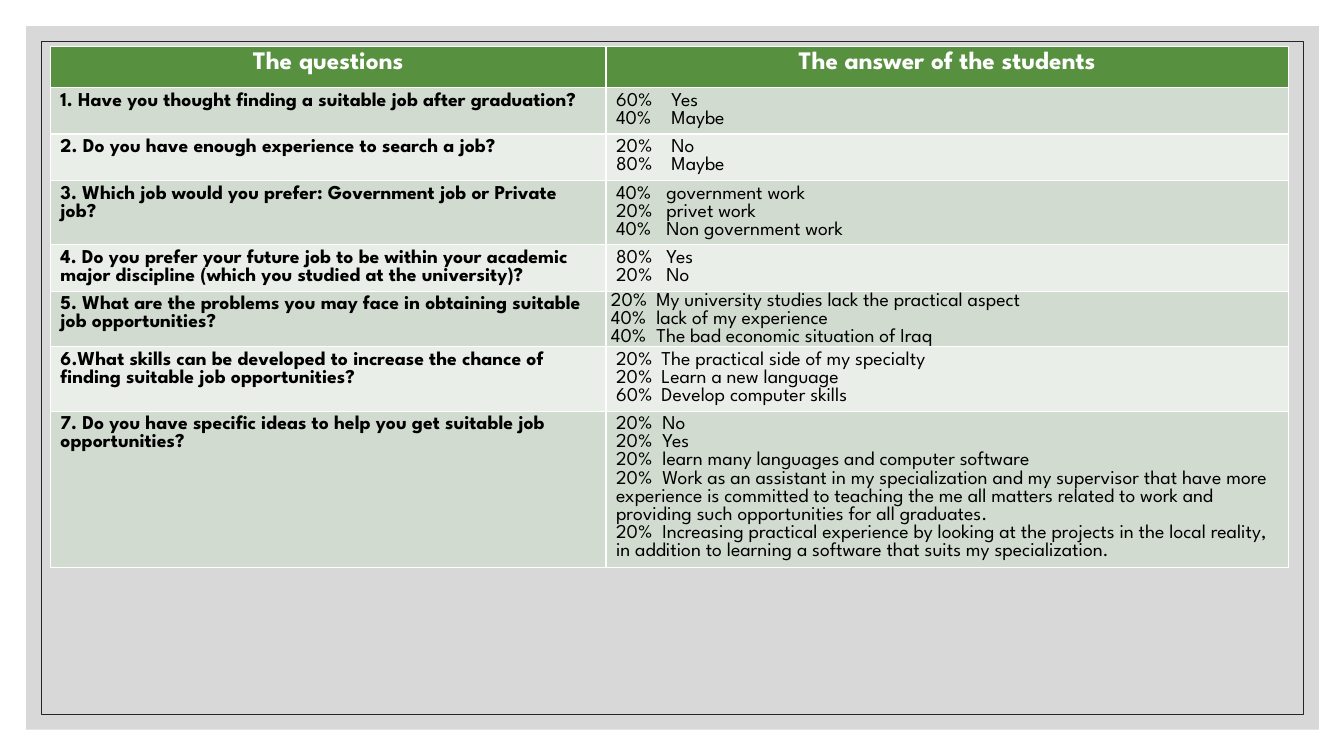
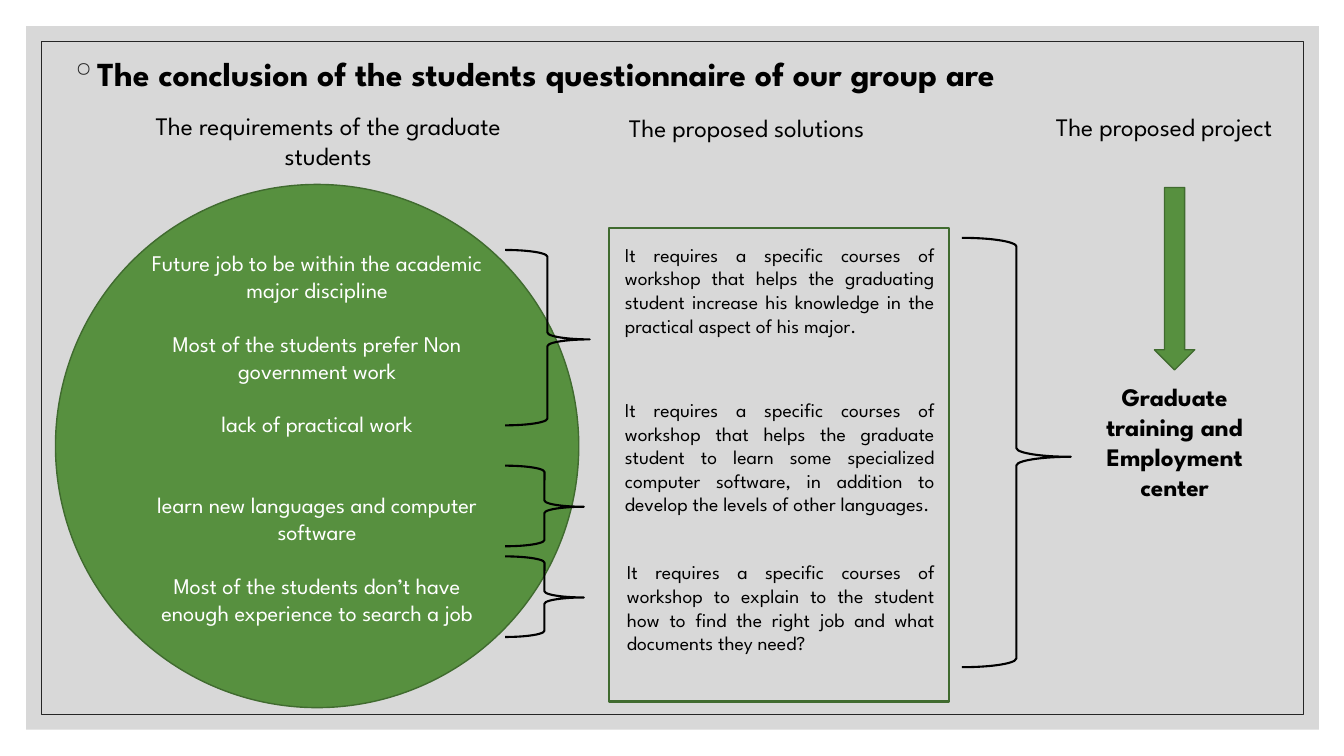
from dataclasses import dataclass

from pptx import Presentation
from pptx.dml.color import RGBColor
from pptx.enum.shapes import MSO_SHAPE
from pptx.enum.text import MSO_ANCHOR, PP_ALIGN
from pptx.oxml import parse_xml
from pptx.oxml.ns import nsdecls
from pptx.util import Emu, Pt

EMU_PER_PX = 9144


@dataclass(frozen=True)
class Theme:
    """Colours, type sizes and line heights shared by the slides."""
    font: str = "League Spartan"
    green: str = "57903F"
    dark_green: str = "406B2F"
    panel: str = "BFBFBF"
    frame: str = "262626"
    ink: str = "000000"
    paper: str = "FFFFFF"
    bands: tuple = ("D1DBCF", "EAEEE8")
    title: int = 24
    heading: int = 18
    need: int = 16
    body: int = 14
    leading: float = 1.2
    tight: float = 0.92


THEME = Theme()

HEADERS = ("The questions", "The answer of the students")
SURVEY = [
    (46, 55, "1. Have you thought finding a suitable job after graduation?",
     [("60%", "Yes"), ("40%", "Maybe")]),
    (46, 55, "2. Do you have enough experience to search a job?",
     [("20%", "No"), ("80%", "Maybe")]),
    (64, 50, "3. Which job would you prefer: Government job or Private job?",
     [("40%", "government work"), ("20%", "privet work"), ("40%", "Non government work")]),
    (46, 50, "4. Do you prefer your future job to be within your academic major discipline "
     "(which you studied at the university)?",
     [("80%", "Yes"), ("20%", "No")]),
    (55, 45, "5. What are the problems you may face in obtaining suitable job opportunities?",
     [("20%", "My university studies lack the practical aspect"),
      ("40%", "lack of my experience"),
      ("40%", "The bad economic situation of Iraq")]),
    (64, 45, "6.What skills can be developed to increase the chance of finding suitable "
     "job opportunities?",
     [("20%", "The practical side of my specialty"),
      ("20%", "Learn a new language"),
      ("60%", "Develop computer skills")]),
    (155, 46, "7. Do you have specific ideas to help you get suitable job opportunities?",
     [("20%", "No"), ("20%", "Yes"),
      ("20%", "learn many languages and computer software"),
      ("20%", "Work as an assistant in my specialization and my supervisor that have more "
       "experience is committed to teaching the me all matters related to work and "
       "providing such opportunities for all graduates."),
      ("20%", "Increasing practical experience by looking at the projects in the local "
       "reality, in addition to learning a software that suits my specialization.")]),
]
PROBLEMS_ROW = 5

NEEDS = [
    (0, "Future job to be within the academic major discipline"),
    (1, "Most of the students prefer Non government work"),
    (1, "lack of practical work"),
    (2, "learn new languages and computer software"),
    (1, "Most of the students don’t have enough experience to search a job"),
]
SOLUTIONS = [
    ((610, 236, 327, 128),
     "It requires a specific courses of workshop that helps the graduating student "
     "increase his knowledge in the practical aspect of his major."),
    ((610, 390, 327, 151),
     "It requires a specific courses of workshop that helps the graduate student to learn "
     "some specialized computer software, in addition to develop the levels of other languages."),
    ((612, 551, 325, 128),
     "It requires a specific courses of workshop to explain to the student how to find "
     "the right job and what documents they need?"),
]
HEADINGS = [
    ((136, 104, 379, 71), "The requirements of the graduate students", PP_ALIGN.CENTER),
    ((614, 107, 304, 40), "The proposed solutions", PP_ALIGN.LEFT),
    ((1027, 105, 255, 71), "The proposed project", PP_ALIGN.CENTER),
]
BRACES = [(501, 248, 84, 174), (501, 462, 78, 80), (501, 552, 78, 80), (954, 236, 108, 426)]


def px(length):
    """Turn px into EMU."""
    return Emu(length * EMU_PER_PX)


def rgb(colour):
    """Turn a hex string into a colour."""
    return RGBColor.from_string(colour)


def style(paragraph, size, colour=THEME.ink, bold=False, align=PP_ALIGN.LEFT,
          leading=THEME.leading):
    """Set the font, alignment and line height of a paragraph."""
    paragraph.alignment = align
    paragraph.line_spacing = Pt(round(size * leading, 1))
    font = paragraph.font
    font.name, font.size, font.bold = THEME.font, Pt(size), bold
    font.color.rgb = rgb(colour)


def write_lines(frame, lines):
    """Put one paragraph per line into a text frame and return them."""
    frame.text = "\n".join(lines)
    return frame.paragraphs


def add_figure(slide, preset, box, fill=None, line=None, width=1):
    """Add a preset shape with an optional fill and outline."""
    figure = slide.shapes.add_shape(preset, *map(px, box))
    figure.shadow.inherit = False
    if fill:
        figure.fill.solid()
        figure.fill.fore_color.rgb = rgb(fill)
    else:
        figure.fill.background()
    if line:
        figure.line.color.rgb = rgb(line)
        figure.line.width = Pt(width)
    else:
        figure.line.fill.background()
    return figure


def add_label(slide, box, text, size, **look):
    """Add a wrapped text box with one paragraph and return the paragraph."""
    frame = slide.shapes.add_textbox(*map(px, box)).text_frame
    frame.word_wrap = True
    paragraph = write_lines(frame, [text])[0]
    style(paragraph, size, **look)
    return paragraph


def add_framed_slide(deck):
    """Add a blank slide with the grey panel and its thin frame."""
    slide = deck.slides.add_slide(deck.slide_layouts[6])
    panel = add_figure(slide, MSO_SHAPE.RECTANGLE, (26, 26, 1282, 698), THEME.panel)
    tint = panel.fill._xPr.solidFill[0]
    tint.append(parse_xml(f'<a:alpha {nsdecls("a")} val="60000"/>'))
    add_figure(slide, MSO_SHAPE.RECTANGLE, (41, 41, 1252, 668), line=THEME.frame, width=0.5)
    return slide


def add_bullet(paragraph, indent):
    """Give a paragraph a ring bullet with a hanging indent."""
    props = paragraph._p.get_or_add_pPr()
    props.set("marL", str(px(indent)))
    props.set("indent", str(-px(indent)))
    bullet = (f'<a:buClr {nsdecls("a")}><a:srgbClr val="{THEME.frame}"/></a:buClr>',
              f'<a:buChar {nsdecls("a")} char="◦"/>')
    for position, xml in enumerate(bullet):
        props.insert(len(props) - 1, parse_xml(xml))


def add_tab_stop(paragraph, position):
    """Set one left tab stop on a paragraph that has no font yet."""
    paragraph._p.get_or_add_pPr().append(parse_xml(
        f'<a:tabLst {nsdecls("a")}><a:tab pos="{px(position)}" algn="l"/></a:tabLst>'))


def fill_cell(cell, fill, lines, size, tab=None, **look):
    """Fill a table cell and write its lines."""
    cell.fill.solid()
    cell.fill.fore_color.rgb = rgb(fill)
    for paragraph in write_lines(cell.text_frame, lines):
        if tab:
            add_tab_stop(paragraph, tab)
        style(paragraph, size, leading=THEME.tight, **look)


def add_survey_table(slide):
    """Add the table of questions and answers."""
    heights = [41] + [height for height, *_ in SURVEY]
    widths = (551, 677)
    table = slide.shapes.add_table(len(heights), len(widths), px(50), px(46),
                                   px(sum(widths)), px(sum(heights))).table
    for column, width in zip(table.columns, widths):
        column.width = px(width)
    for row, height in zip(table.rows, heights):
        row.height = px(height)
    for column, header in enumerate(HEADERS):
        fill_cell(table.cell(0, column), THEME.green, [header], THEME.heading,
                  colour=THEME.paper, bold=True, align=PP_ALIGN.CENTER)
    for row, (_, tab, question, answers) in enumerate(SURVEY, 1):
        band = THEME.bands[(row - 1) % 2]
        fill_cell(table.cell(row, 0), band, [question], THEME.body, bold=True)
        fill_cell(table.cell(row, 1), band, ["\t".join(answer) for answer in answers],
                  THEME.body, tab=tab)
    problems = table.cell(PROBLEMS_ROW, 1)
    problems.vertical_anchor = MSO_ANCHOR.BOTTOM
    problems.margin_left = px(5)
    problems.margin_right = problems.margin_top = px(1)
    problems.margin_bottom = 0


def add_needs_circle(slide):
    """Add the green circle that lists what graduates need."""
    circle = add_figure(slide, MSO_SHAPE.OVAL, (55, 183, 519, 519),
                        THEME.green, THEME.dark_green)
    frame = circle.text_frame
    frame.word_wrap = True
    frame.vertical_anchor = MSO_ANCHOR.MIDDLE
    frame.margin_bottom = px(22)
    paragraphs = write_lines(frame, [need for _, need in NEEDS])
    for paragraph, (gap, _) in zip(paragraphs, NEEDS):
        paragraph.space_before = Pt(round(gap * THEME.need * THEME.leading, 1))
        style(paragraph, THEME.need, THEME.paper, align=PP_ALIGN.CENTER)


def add_brace(slide, box):
    """Add a right brace that gathers items."""
    brace = add_figure(slide, MSO_SHAPE.RIGHT_BRACE, box, line=THEME.ink, width=1.5)
    brace.adjustments[0] = 0.08
    brace.adjustments[1] = 0.51


def build_survey(deck):
    """Build the slide with the questionnaire results."""
    add_survey_table(add_framed_slide(deck))


def build_conclusion(deck):
    """Build the slide that leads from needs to the project."""
    slide = add_framed_slide(deck)
    title = add_label(slide, (60, 48, 1214, 45),
                      "The conclusion of the students questionnaire of our group are",
                      THEME.title, bold=True)
    add_bullet(title, 20)
    add_needs_circle(slide)
    add_figure(slide, MSO_SHAPE.RECTANGLE, (604, 226, 337, 470),
               line=THEME.dark_green, width=1.5)
    for box, solution in SOLUTIONS:
        add_label(slide, box, solution, THEME.body, align=PP_ALIGN.JUSTIFY)
    for box, heading, align in HEADINGS:
        add_label(slide, box, heading, THEME.heading, align=align)
    for box in BRACES:
        add_brace(slide, box)
    add_figure(slide, MSO_SHAPE.DOWN_ARROW, (1145, 186, 40, 181),
               THEME.green, THEME.dark_green)
    add_label(slide, (1064, 373, 202, 131), "Graduate training and Employment center",
              THEME.heading, bold=True, align=PP_ALIGN.CENTER)


def main():
    """Build and save the deck."""
    deck = Presentation()
    deck.slide_width, deck.slide_height = px(1333), px(750)
    build_survey(deck)
    build_conclusion(deck)
    deck.save("out.pptx")


if __name__ == "__main__":
    main()
